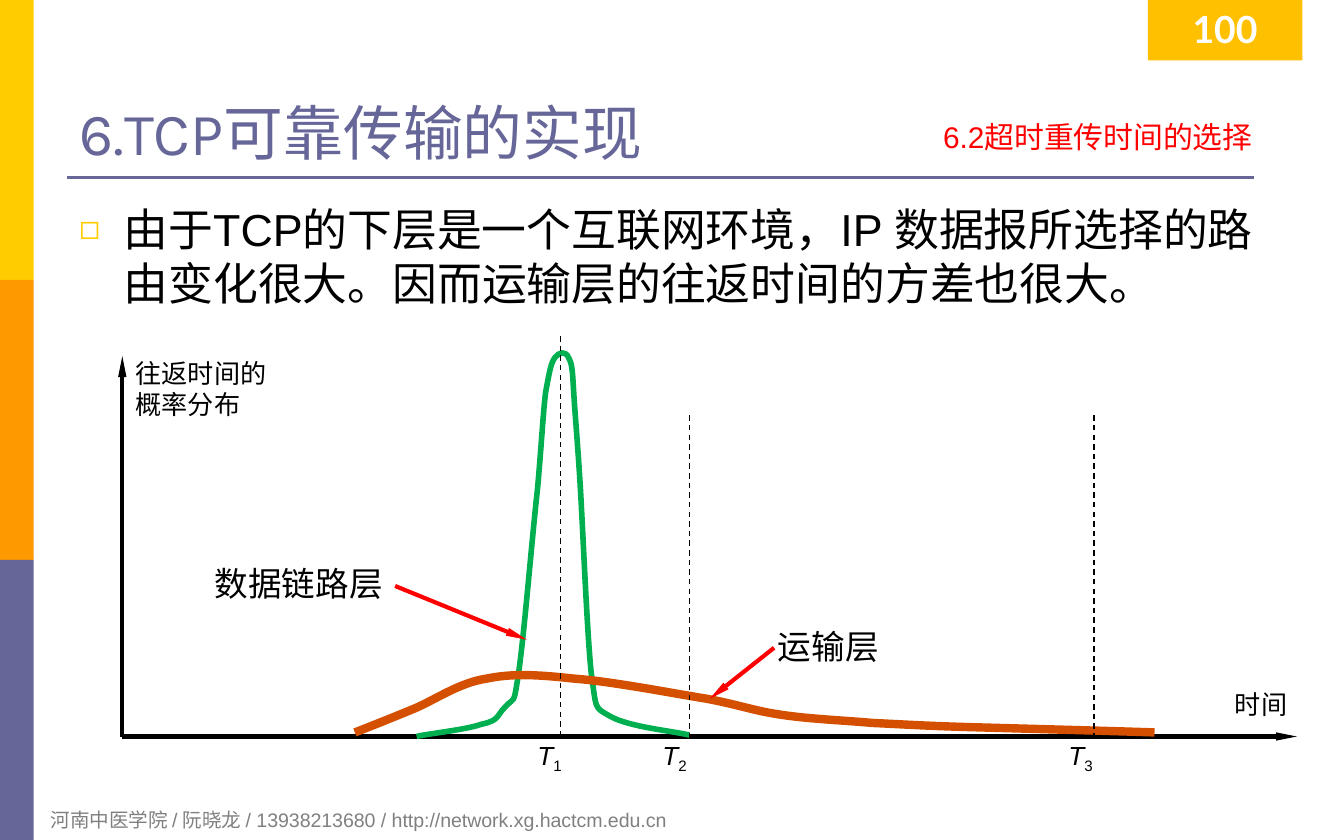
import pptx
import pptx.dml.color
import pptx.enum.dml
import pptx.enum.shapes
import pptx.enum.text
import pptx.oxml
import pptx.oxml.ns
import pptx.util

ALIGN = pptx.enum.text.PP_ALIGN
ANCHOR = pptx.enum.text.MSO_ANCHOR
NAMESPACE = pptx.oxml.ns.nsdecls("a")
COLORS = {
    "yellow": "FFCC00", "orange": "FF9900", "slate": "666699", "gold": "FFC000",
    "gray": "808080", "white": "FFFFFF", "black": "000000", "red": "FF0000",
    "green": "00B050", "rust": "D45000",
}
COLUMNS, ROWS = 100, 62.5
CELL = pptx.util.Inches(0.1)
AXIS_X, AXIS_Y = 9.1, 54.8

# Cubic curves: a start point, then (control, control, end) for each segment.
LINK_LAYER = [
    (31, 54.8),
    (31.8, 54.6), (34.7, 54.3), (35.8, 53.9),
    (37.2, 53.6), (36.9, 53.3), (37.6, 52.6),
    (38.3, 51.8), (38.2, 52.7), (38.6, 50),
    (39, 47.3), (39.6, 39.9), (40, 36.4),
    (40.3, 33), (40.4, 30.9), (40.6, 29.2),
    (40.9, 27.6), (41, 27), (41.3, 26.6),
    (41.6, 26.2), (42.1, 26.1), (42.3, 26.6),
    (42.6, 27.1), (42.6, 27.7), (42.7, 29.3),
    (42.8, 31), (43, 33.1), (43.2, 36.5),
    (43.4, 40), (43.7, 47.3), (44, 50.1),
    (44.4, 52.9), (44.2, 52.6), (45.4, 53.3),
    (46.8, 54.1), (50.1, 54.4), (51.3, 54.7),
]
TRANSPORT_LAYER = [
    (26.4, 54.5),
    (27.2, 54.2), (29.2, 53.4), (30.9, 52.7),
    (32.5, 52), (34.2, 50.8), (36.2, 50.5),
    (38.1, 50.1), (40, 50.2), (42.7, 50.5),
    (45.5, 50.7), (50.1, 51.6), (52.6, 52),
    (55.2, 52.5), (56.1, 52.9), (58.2, 53.2),
    (60.2, 53.5), (62.7, 53.6), (65, 53.8),
    (67.2, 53.9), (68.5, 54), (71.9, 54.1),
    (75.4, 54.2), (83, 54.4), (85.9, 54.5),
]


class Canvas:
    """Draws on one slide; lengths are columns and rows of a 0.1 inch grid."""

    def __init__(self, deck):
        deck.slide_width = self.grid(COLUMNS)
        deck.slide_height = self.grid(ROWS)
        self.shapes = deck.slides.add_slide(deck.slide_layouts[6]).shapes

    @staticmethod
    def grid(cells):
        return pptx.util.Emu(round(cells * CELL))

    @staticmethod
    def color(name):
        return pptx.dml.color.RGBColor.from_string(COLORS[name])

    def run(self, paragraph, text, size, color="black", font="Arial",
            bold=False, italic=False, baseline=None):
        run = paragraph.add_run()
        run.text = text
        run.font.size = pptx.util.Pt(size)
        run.font.name = font
        run.font.bold = bold
        run.font.italic = italic
        run.font.color.rgb = self.color(color)
        if baseline:
            run._r.get_or_add_rPr().set("baseline", str(baseline * 1000))

    def block(self, box, fill):
        shape = self.shapes.add_shape(
            pptx.enum.shapes.MSO_SHAPE.RECTANGLE, *map(self.grid, box))
        shape.shadow.inherit = False
        shape.fill.solid()
        shape.fill.fore_color.rgb = self.color(fill)
        shape.line.fill.background()
        return shape

    def badge(self, box, fill, text, **style):
        frame = self.block(box, fill).text_frame
        frame.vertical_anchor = ANCHOR.TOP
        frame.margin_top = frame.margin_bottom = self.grid(0.45)
        frame.paragraphs[0].alignment = ALIGN.CENTER
        self.run(frame.paragraphs[0], text, **style)

    def text(self, box, lines, wrap=True, inset=0.5, align=ALIGN.LEFT,
             anchor=ANCHOR.TOP, **style):
        """Add a text box with one paragraph per line; return its frame."""
        frame = self.shapes.add_textbox(*map(self.grid, box)).text_frame
        frame.word_wrap = wrap
        frame.vertical_anchor = anchor
        frame.margin_left = frame.margin_right = self.grid(inset + 0.5)
        frame.margin_top = frame.margin_bottom = self.grid(inset)
        for i, line in enumerate(lines):
            paragraph = frame.add_paragraph() if i else frame.paragraphs[0]
            paragraph.alignment = align
            self.run(paragraph, line, **style)
        return frame

    def bullet_text(self, box, text, **style):
        frame = self.text(box, [text], inset=0.4, **style)
        properties = frame.paragraphs[0]._p.get_or_add_pPr()
        properties.set("marL", str(self.grid(3.3)))
        properties.set("indent", str(-self.grid(3.3)))
        for xml in (
            f'<a:buClr {NAMESPACE}><a:srgbClr val="{COLORS["yellow"]}"/></a:buClr>',
            f'<a:buSzPct {NAMESPACE} val="75000"/>',
            f'<a:buFont {NAMESPACE} typeface="Arial"/>',
            f'<a:buChar {NAMESPACE} char="◻"/>',
        ):
            properties.append(pptx.oxml.parse_xml(xml))

    def line(self, start, end, color, width, dashed=False, arrow=False):
        connector = self.shapes.add_connector(
            pptx.enum.shapes.MSO_CONNECTOR.STRAIGHT, *map(self.grid, start + end))
        connector.line.color.rgb = self.color(color)
        connector.line.width = pptx.util.Pt(width)
        if dashed:
            connector.line.dash_style = pptx.enum.dml.MSO_LINE.DASH
        if arrow:
            connector.line._get_or_add_ln().append(pptx.oxml.parse_xml(
                f'<a:tailEnd {NAMESPACE} type="triangle" w="sm" len="lg"/>'))
        connector._element.spPr.append(
            pptx.oxml.parse_xml(f"<a:effectLst {NAMESPACE}/>"))

    def curve(self, knots, color, width):
        """Build the knots as a polyline, then join each three into a Bezier."""
        start, *rest = [tuple(map(self.grid, knot)) for knot in knots]
        builder = self.shapes.build_freeform(*start)
        builder.add_line_segments(rest, close=False)
        shape = builder.convert_to_shape()
        segments = shape._element.findall(".//" + pptx.oxml.ns.qn("a:lnTo"))
        outline = segments[0].getparent()
        for i in range(0, len(segments), 3):
            bezier = pptx.oxml.parse_xml(f"<a:cubicBezTo {NAMESPACE}/>")
            for segment in segments[i:i + 3]:
                bezier.append(segment[0])
                outline.remove(segment)
            outline.append(bezier)
        shape.shadow.inherit = False
        shape.fill.background()
        shape.line.color.rgb = self.color(color)
        shape.line.width = pptx.util.Pt(width)


def main():
    deck = pptx.Presentation()
    canvas = Canvas(deck)

    band = ROWS / 3
    for i, fill in enumerate(("yellow", "orange", "slate")):
        canvas.block((0, i * band, 2.5, band), fill)
    canvas.line((5, 13.2), (93.3, 13.2), "slate", 1.5)
    canvas.text((2.8, 59.6, 67.7, 2.8),
                ["河南中医学院 / 阮晓龙 / 13938213680 / http://network.xg.hactcm.edu.cn"],
                size=10.5, color="gray")

    canvas.text((5, 2.5, 90, 10.4), ["6.TCP可靠传输的实现"], inset=0.4,
                anchor=ANCHOR.BOTTOM, size=32, color="slate", font="Karla")
    canvas.badge((85.4, 0, 11.5, 4.5), "gold", "100",
                 size=20, color="white", font="Lato", bold=True)
    canvas.text((62.6, 8.4, 31.5, 3.9), ["6.2超时重传时间的选择"], inset=0.4,
                align=ALIGN.RIGHT, size=16, color="red")
    canvas.bullet_text(
        (5, 14.6, 90, 41.3),
        "由于TCP的下层是一个互联网环境，IP 数据报所选择的路由变化很大。"
        "因而运输层的往返时间的方差也很大。", size=24)

    for axis_end in ((96.5, AXIS_Y), (AXIS_X, 26.5)):
        canvas.line((AXIS_X, AXIS_Y), axis_end, "black", 2.25, arrow=True)
    canvas.curve(LINK_LAYER, "green", 3)
    canvas.curve(TRANSPORT_LAYER, "rust", 4.5)

    for index, x, top, label_x in (("1", 41.7, 25, 39), ("2", 51.3, 30.9, 48.3),
                                   ("3", 81.4, 30.9, 78.5)):
        canvas.line((x, top), (x, AXIS_Y), "black", 0.75, dashed=True)
        label = canvas.text((label_x, 54.5, 3.9, 3.4), ["T"], wrap=False,
                            size=14, italic=True)
        canvas.run(label.paragraphs[0], index, 14, baseline=-25)

    for box, lines, size in (
        ((90.9, 50.7, 5.9, 3.4), ["时间"], 14),
        ((9.1, 26.1, 11.8, 5.7), ["往返时间的", "概率分布"], 14),
        ((15, 41.4, 14.6, 4), ["数据链路层"], 18),
        ((56.9, 46.1, 9.6, 4), ["运输层"], 18),
    ):
        canvas.text(box, lines, wrap=False, size=size)
    canvas.line((29.4, 43.6), (39.2, 47.6), "red", 2.25, arrow=True)
    canvas.line((57.6, 48.2), (52.8, 52), "red", 2.25, arrow=True)

    deck.save("out.pptx")


if __name__ == "__main__":
    main()
